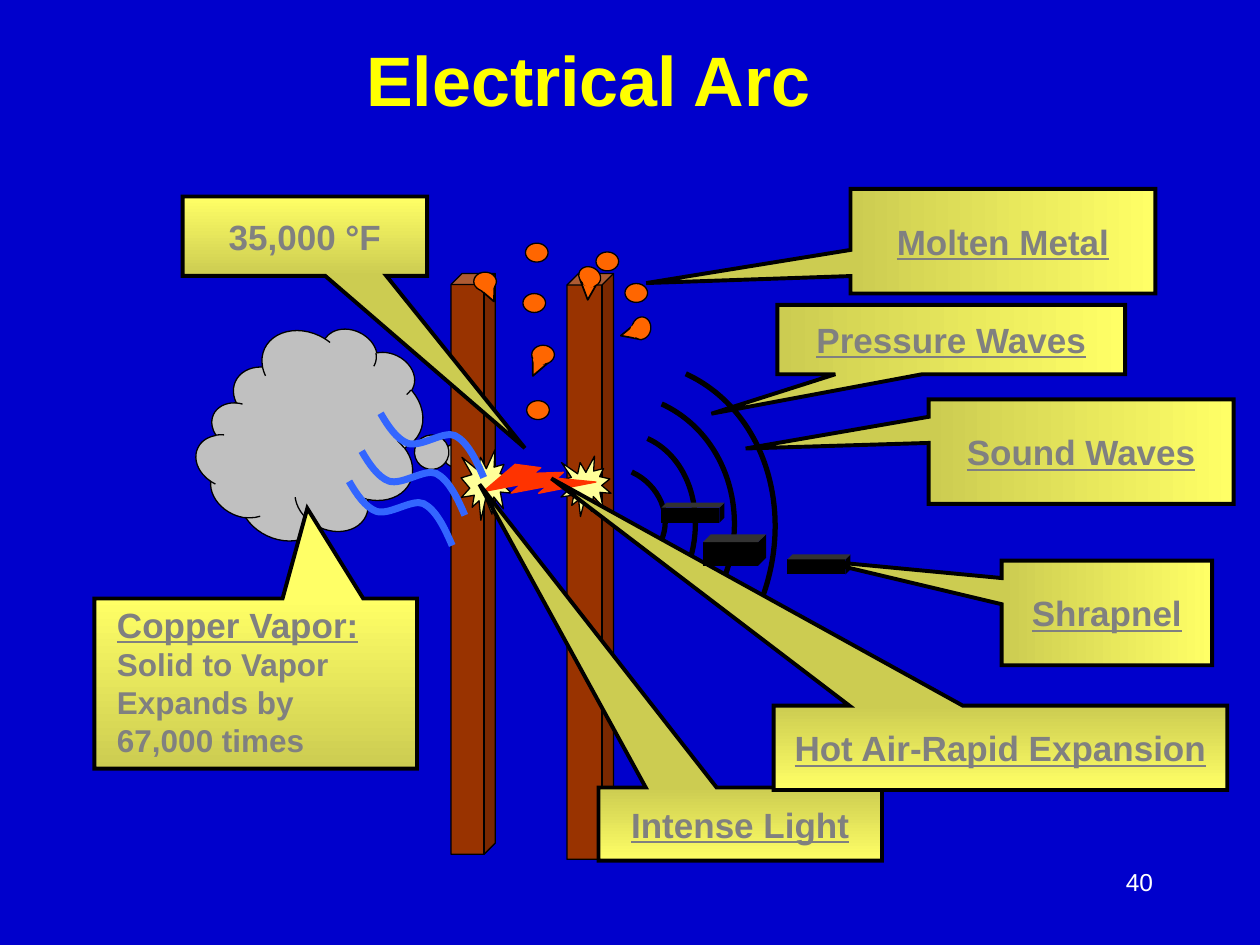
from lxml import etree
from pptx import Presentation
from pptx.dml.color import RGBColor
from pptx.enum.shapes import MSO_SHAPE
from pptx.enum.text import MSO_ANCHOR, PP_ALIGN
from pptx.oxml.ns import qn
from pptx.util import Inches, Pt

COLORS = {"blue": "0000CC", "yellow": "FFFF00", "white": "FFFFFF", "black": "000000",
          "grey": "808080", "cloud": "C0C0C0", "copper": "993300", "flash": "FFFF99",
          "molten": "FF6600", "bolt": "FF3300", "wave": "3366FF", "callout": "FFFF66"}
FONT = "Arial"

# Boxes are left, top, width, height in inches
BARS = [(3.58, 2.17, 0.35, 4.61), (4.5, 2.17, 0.37, 4.65)]
LEFT_FLASH, RIGHT_FLASH = (3.66, 3.57, 0.4, 0.56), (4.45, 3.62, 0.4, 0.48)

# Curves are cubic chains given as shares of their box
QUARTER = [(0, 0), (0.55, 0), (1, 0.45), (1, 1)]
PRESSURE_ARCS = [(4.91, 3.82, 0.44, 0.4), (4.92, 3.59, 0.72, 0.89),
                 (4.97, 3.37, 1.03, 1.12), (5.07, 3.17, 1.3, 1.5)]
RIPPLE = [(0, 0), (0.03, 0.15), (0.08, 0.31), (0.2, 0.39), (0.35, 0.48),
          (0.72, 0.4), (0.84, 0.49), (0.97, 0.6), (0.99, 0.8), (1, 1)]
VAPOR_WAVES = [(left, top, 0.58, 0.77) for left, top in
               ((3.14, 3.15), (2.99, 3.45), (2.89, 3.69))]
ARC_TURN, WAVE_TURN = 24.7, 338.9

BALL, TAIL, SEAM = (0.18, 0.15), (0.14, 0.15), (0.11, 0.09)
BALLS = [(4.15, 2.33), (4.17, 1.93), (4.18, 3.18), (4.96, 2.25), (4.73, 2)]
# Tail corner, tail turn, ball corner, seam corner, ball turn
DROPS = [
    ((3.82, 2.25), 335.8, (3.76, 2.16), (3.81, 2.23), 0),
    ((4.19, 2.84), 24.2, (4.22, 2.74), (4.23, 2.81), 0),
    ((4.6, 2.23), 4.3, (4.59, 2.12), (4.62, 2.19), 28.5),
    ((4.93, 2.57), 75.3, (5, 2.53), (4.99, 2.58), 99.5),
]
SHRAPNEL = [(5.25, 3.99, 0.5, 0.16), (6.25, 4.4, 0.5, 0.16), (5.58, 4.24, 0.5, 0.25)]

# Label, box, pointer tip, index of the shaded stop, gradient angle, underlined
ACROSS, DOWN = 0, 270
FIRST, LAST = 0, 1
CALLOUTS = [
    ("Pressure Waves", (6.17, 2.42, 2.76, 0.55), (-0.69, 1.07), FIRST, ACROSS, True),
    ("", (0.75, 4.75, 2.56, 1.35), (0.16, -1.03), LAST, DOWN, False),
    ("Molten Metal", (6.75, 1.5, 2.42, 0.83), (-1.17, 0.4), FIRST, ACROSS, True),
    ("Intense Light", (4.75, 6.25, 2.25, 0.58), (-0.92, -4.65), FIRST, DOWN, True),
    ("Hot Air-Rapid Expansion", (6.14, 5.6, 3.6, 0.67), (-0.99, -3.19), FIRST, DOWN, True),
    ("35,000 °F", (1.45, 1.56, 1.94, 0.63), (0.9, 2.67), LAST, DOWN, False),
    ("Shrapnel", (7.95, 4.45, 1.67, 0.83), (-1.37, -0.5), FIRST, ACROSS, True),
    ("Sound Waves", (7.37, 3.17, 2.42, 0.83), (-1.1, -0.03), FIRST, ACROSS, True),
]
VAPOR_NOTE = [("Copper Vapor:", 20, True), ("Solid to Vapor", 18, False),
              ("Expands by", 18, False), ("67,000 times", 18, False)]


def rgb(name):
    return RGBColor.from_string(COLORS[name])


def write(para, text, size, color, bold=True, underline=False, align=None):
    para.alignment = align
    span = para.add_run()
    span.text = text
    span.font.name, span.font.size = FONT, Pt(size)
    span.font.bold, span.font.underline = bold, underline
    span.font.color.rgb = rgb(color)


def outline(shape, color, width):
    if color is None:
        shape.line.fill.background()
    else:
        shape.line.color.rgb = rgb(color)
        shape.line.width = Pt(width)


def draw(shapes, kind, box, fill, line="black", width=0.75, turn=0):
    shape = shapes.add_shape(kind, *map(Inches, box))
    shape.shadow.inherit = False
    shape.rotation = turn % 360
    shape.fill.solid()
    shape.fill.fore_color.rgb = rgb(fill)
    outline(shape, line, width)
    return shape


def curve(shapes, chain, box, color, width, turn):
    left, top, wide, high = box
    points = [(Inches(left + x * wide), Inches(top + y * high)) for x, y in chain]
    builder = shapes.build_freeform(*points[0])
    builder.add_line_segments(points[1:], close=False)
    shape = builder.convert_to_shape()
    shape.shadow.inherit = False
    shape.rotation = turn
    shape.fill.background()
    outline(shape, color, width)
    # Turn every three straight steps into one cubic curve
    track = next(shape.element.iter(qn("a:path")))
    steps = track.findall(qn("a:lnTo"))
    for first in range(0, len(steps), 3):
        cubic = etree.SubElement(track, qn("a:cubicBezTo"))
        for step in steps[first:first + 3]:
            cubic.append(step[0])
            track.remove(step)


def callout(shapes, label, box, tip, shaded, angle, underline):
    shape = draw(shapes, MSO_SHAPE.RECTANGULAR_CALLOUT, box, "callout", width=2.25)
    shape.adjustments[0], shape.adjustments[1] = tip
    shape.fill.gradient()
    shape.fill.gradient_angle = angle
    for index, stop in enumerate(shape.fill.gradient_stops):
        stop.color.rgb, stop.position = rgb("callout"), index
    # Darken one stop, and keep sharp corners at the pointer tip
    tint = list(shape.element.spPr.iter(qn("a:srgbClr")))[shaded]
    etree.SubElement(tint, qn("a:gamma"))
    etree.SubElement(tint, qn("a:shade"), val="80000")
    etree.SubElement(tint, qn("a:invGamma"))
    etree.SubElement(shape.element.spPr.find(qn("a:ln")), qn("a:miter"), lim="800000")
    if label:
        frame = shape.text_frame
        frame.word_wrap = False
        frame.vertical_anchor = MSO_ANCHOR.MIDDLE
        write(frame.paragraphs[0], label, 20, "grey", underline=underline,
              align=PP_ALIGN.CENTER)


def main():
    deck = Presentation()
    deck.slide_width, deck.slide_height = Inches(10), Inches(7.5)
    page = deck.slides.add_slide(deck.slide_layouts[5])
    page.background.fill.solid()
    page.background.fill.fore_color.rgb = rgb("blue")
    shapes = page.shapes

    # Title and page number
    title = shapes.title
    title.left, title.top, title.width, title.height = map(Inches, (0.42, 0.33, 8.5, 0.58))
    title.text_frame.vertical_anchor = MSO_ANCHOR.MIDDLE
    write(title.text_frame.paragraphs[0], "Electrical Arc", 40, "yellow",
          align=PP_ALIGN.CENTER)
    number = shapes.add_textbox(*map(Inches, (7.17, 6.83, 2.08, 0.5)))
    number.text_frame.word_wrap = True
    write(number.text_frame.paragraphs[0], "40", 14, "white", bold=False,
          align=PP_ALIGN.RIGHT)

    # Vapor cloud, copper bars and pressure arcs
    cloud = draw(shapes, MSO_SHAPE.CLOUD_CALLOUT, (1.63, 2.64, 1.77, 1.64), "cloud", turn=295.2)
    cloud.adjustments[0], cloud.adjustments[1] = -0.2, 0.7
    cloud.element.spPr.find(qn("a:xfrm")).set("flipH", "1")
    for box in BARS:
        draw(shapes, MSO_SHAPE.CUBE, box, "copper")
    draw(shapes, MSO_SHAPE.EXPLOSION1, RIGHT_FLASH, "flash")
    arcs = shapes.add_group_shape()
    for box in PRESSURE_ARCS:
        curve(arcs.shapes, QUARTER, box, "black", 3, ARC_TURN)

    # Molten balls, arc flash and vapor waves
    for corner in BALLS:
        draw(shapes, MSO_SHAPE.OVAL, corner + BALL, "molten")
    draw(shapes, MSO_SHAPE.EXPLOSION1, LEFT_FLASH, "flash")
    draw(shapes, MSO_SHAPE.LIGHTNING_BOLT, (3.85, 3.62, 0.83, 0.42), "bolt", "bolt", turn=332.6)
    for box in VAPOR_WAVES:
        curve(shapes, RIPPLE, box, "wave", 4, WAVE_TURN)

    # Molten drops: pointed tail, ball, and a seam cover between them
    for tail, tail_turn, ball, seam, turn in DROPS:
        drop = shapes.add_group_shape().shapes
        draw(drop, MSO_SHAPE.ISOSCELES_TRIANGLE, tail + TAIL, "molten", width=1,
             turn=tail_turn + 180)
        draw(drop, MSO_SHAPE.OVAL, ball + BALL, "molten", turn=turn)
        draw(drop, MSO_SHAPE.OVAL, seam + SEAM, "molten", line=None, turn=turn)

    # Callouts and the vapor note
    for entry in CALLOUTS:
        callout(shapes, *entry)
    note = shapes.add_textbox(*map(Inches, (0.83, 4.74, 2.52, 1.34))).text_frame
    note.word_wrap = True
    for index, (text, size, underline) in enumerate(VAPOR_NOTE):
        para = note.add_paragraph() if index else note.paragraphs[0]
        write(para, text, size, "grey", underline=underline)

    # Shrapnel
    for box in SHRAPNEL:
        draw(shapes, MSO_SHAPE.CUBE, box, "black", line=None)

    deck.save("out.pptx")


if __name__ == "__main__":
    main()
